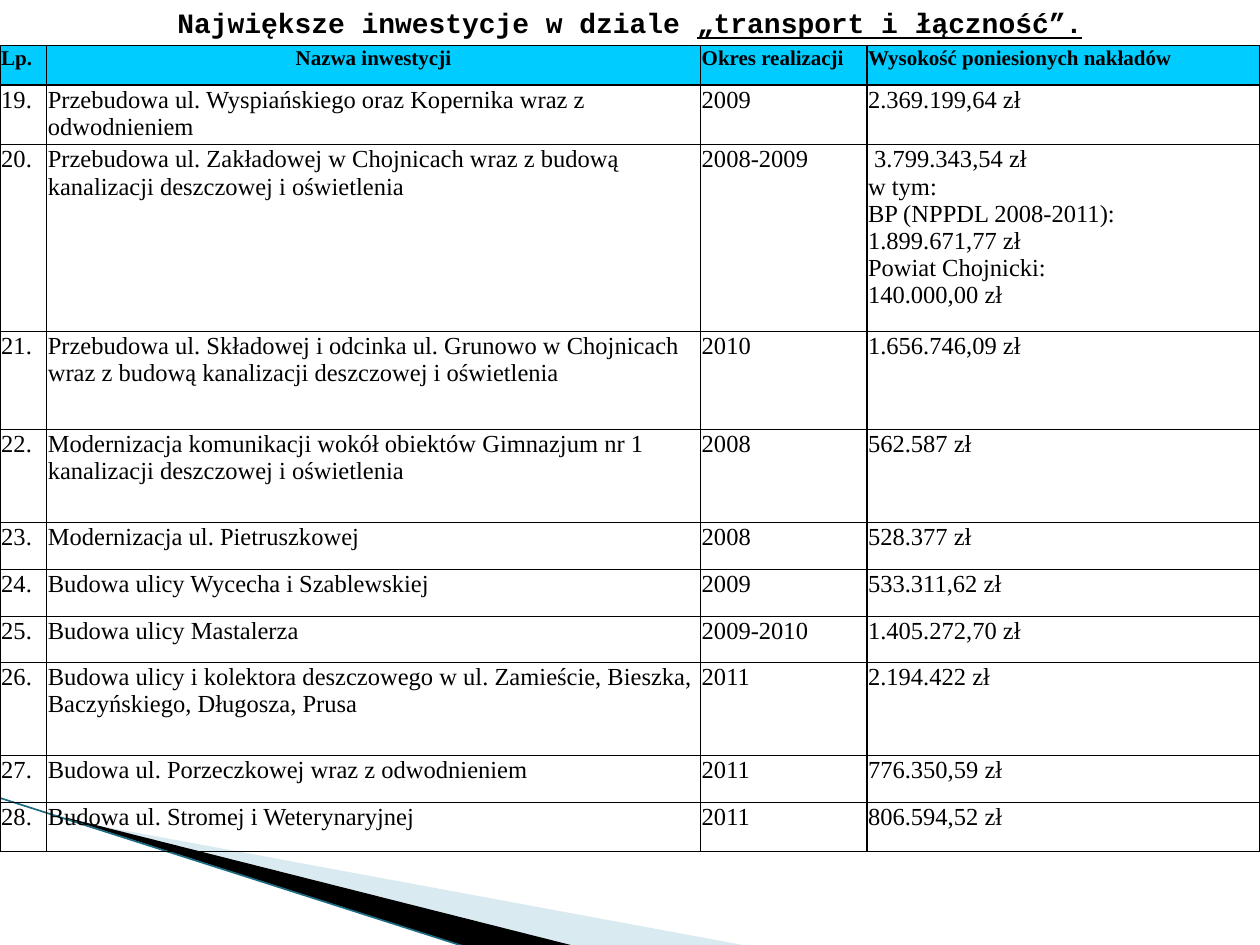
from lxml import etree
from pptx import Presentation
from pptx.dml.color import RGBColor
from pptx.enum import shapes, text
from pptx.oxml import ns
from pptx.util import Inches, Pt


def paint(hue):
    return RGBColor.from_string(hue)


def grid(top, cols, rows, data, size, fill=None):
    """Add a bordered table; | parts paragraphs, a line feed breaks a line."""
    frame = slide.shapes.add_table(len(rows), len(cols), 0, Inches(top),
                                   Inches(sum(cols)), Inches(sum(rows)))
    table = frame.table
    table.first_row = fill is not None
    table.horz_banding = False
    for col, width in zip(table.columns, cols):
        col.width = Inches(width)
    for i, (row, high) in enumerate(zip(table.rows, rows)):
        row.height = Inches(high)
        for j, (cell, words) in enumerate(zip(row.cells, data[i])):
            cell.margin_left = cell.margin_right = cell.margin_top = Inches(0.01)
            cell.margin_bottom = 0
            box = cell.text_frame
            for m, part in enumerate(words.split("|")):
                para = box.add_paragraph() if m else box.paragraphs[0]
                if fill and j == 1:
                    para.alignment = text.PP_ALIGN.CENTER
                for n, line in enumerate(part.split("\n")):
                    if n:
                        para.add_line_break()
                    run = para.add_run()
                    run.text = line
                    run.font.name = "Times New Roman"
                    run.font.size = Pt(size)
                    run.font.bold = fill is not None
                    run.font.color.rgb = paint("000000")
            # Cell borders come before the fill
            props = cell._tc.get_or_add_tcPr()
            thick = {"L": True, "R": True, "T": bool(fill),
                     "B": bool(fill) or i == len(rows) - 1}
            for side in "LRTB":
                edge = etree.SubElement(props, ns.qn("a:ln" + side),
                                        w=str(Pt(1 if thick[side] else 0.5)))
                solid = etree.SubElement(edge, ns.qn("a:solidFill"))
                etree.SubElement(solid, ns.qn("a:srgbClr"), val="000000")
            if fill:
                cell.fill.solid()
                cell.fill.fore_color.rgb = paint(fill)
            else:
                cell.fill.background()


deck = Presentation()
deck.slide_width, deck.slide_height = Inches(10), Inches(7.5)
slide = deck.slides.add_slide(deck.slide_layouts[5])

# Corner wedges: colour, opacity, frame, outline
wedges = [
    ("A0CBDC", 40, (0.78, 5.47, 4.16, 1.58),
     [(0.55, 6.51), (5.95, 7.51), (4.56, 7.51), (0.55, 6.5)]),
    ("000000", 100, (-0.06, 6.33, 4.16, 0.92),
     [(0.53, 6.49), (4.57, 7.51), (3.72, 7.52), (0.54, 6.5)]),
]
for hue, alpha, frame, points in wedges:
    pen = slide.shapes.build_freeform(Inches(points[0][0]), Inches(points[0][1]))
    pen.add_line_segments([(Inches(x), Inches(y)) for x, y in points[1:]])
    wedge = pen.convert_to_shape()
    # The outline reaches beyond its frame, so shift it against the frame
    left, top, wide, high = [Inches(n) for n in frame]
    props = wedge._element.spPr
    for spot in props.iter(ns.qn("a:pt")):
        spot.set("x", str(int(spot.get("x")) + wedge.left - left))
        spot.set("y", str(int(spot.get("y")) + wedge.top - top))
    outline = props.find(".//" + ns.qn("a:path"))
    outline.set("w", str(wide))
    outline.set("h", str(high))
    wedge.left, wedge.top, wedge.width, wedge.height = left, top, wide, high
    wedge.shadow.inherit = False
    wedge.fill.solid()
    wedge.fill.fore_color.rgb = paint(hue)
    wedge.line.fill.background()
    if alpha < 100:
        tint = props.find(".//" + ns.qn("a:srgbClr"))
        etree.SubElement(tint, ns.qn("a:alpha"), val=str(alpha * 1000))

# Corner line
edge = slide.shapes.add_connector(shapes.MSO_CONNECTOR.STRAIGHT, Inches(-0.01),
                                  Inches(6.33), Inches(3.71), Inches(7.52))
edge.line.color.rgb = paint("1B6C82")
edge.line.width = Pt(0.95)
etree.SubElement(edge._element.spPr, ns.qn("a:effectLst"))

# Title
title = slide.shapes.title
title.left, title.top = 0, 0
title.width, title.height = Inches(10), Inches(0.36)
box = title.text_frame
box.word_wrap = True
box.auto_size = text.MSO_AUTO_SIZE.NONE
box.vertical_anchor = text.MSO_ANCHOR.MIDDLE
para = box.paragraphs[0]
para.alignment = text.PP_ALIGN.CENTER
for words, under in [("Największe inwestycje w dziale ", False),
                     ("„transport i łączność”.", True)]:
    run = para.add_run()
    run.text = words
    run.font.name = "Courier New"
    run.font.size = Pt(16)
    run.font.bold = True
    run.font.underline = under
    run.font.color.rgb = paint("000000")

# Header and body tables share their columns
cols = [0.37, 5.19, 1.32, 3.12]
head = ["Lp.", "Nazwa inwestycji", "Okres realizacji", "Wysokość poniesionych nakładów"]
works = [
    (0.47, "Przebudowa ul. Wyspiańskiego oraz Kopernika wraz z odwodnieniem",
     "2009", "2.369.199,64 zł"),
    (1.48, "Przebudowa ul. Zakładowej w Chojnicach wraz z budową "
     "kanalizacji deszczowej i oświetlenia", "2008-2009",
     " 3.799.343,54 zł\nw tym:\nBP (NPPDL 2008-2011):|1.899.671,77 zł\n"
     "Powiat Chojnicki:\n140.000,00 zł"),
    (0.78, "Przebudowa ul. Składowej i odcinka ul. Grunowo w Chojnicach "
     "wraz z budową kanalizacji deszczowej i oświetlenia", "2010", "1.656.746,09 zł"),
    (0.74, "Modernizacja komunikacji wokół obiektów Gimnazjum nr 1 "
     "kanalizacji deszczowej i oświetlenia", "2008", "562.587 zł"),
    (0.37, "Modernizacja ul. Pietruszkowej", "2008", "528.377 zł"),
    (0.37, "Budowa ulicy Wycecha i Szablewskiej", "2009", "533.311,62 zł"),
    (0.37, "Budowa ulicy Mastalerza", "2009-2010", "1.405.272,70 zł"),
    (0.74, "Budowa ulicy i kolektora deszczowego w ul. Zamieście, Bieszka, "
     "Baczyńskiego, Długosza, Prusa", "2011", "2.194.422 zł"),
    (0.37, "Budowa ul. Porzeczkowej wraz z odwodnieniem", "2011", "776.350,59 zł"),
    (0.39, "Budowa ul. Stromej i Weterynaryjnej", "2011", "806.594,52 zł"),
]
grid(0.36, cols, [0.31], [head], 12, "00CCFF")
grid(0.68, cols, [work[0] for work in works],
     [(f"{n}.", *work[1:]) for n, work in enumerate(works, 19)], 14)

deck.save("out.pptx")
